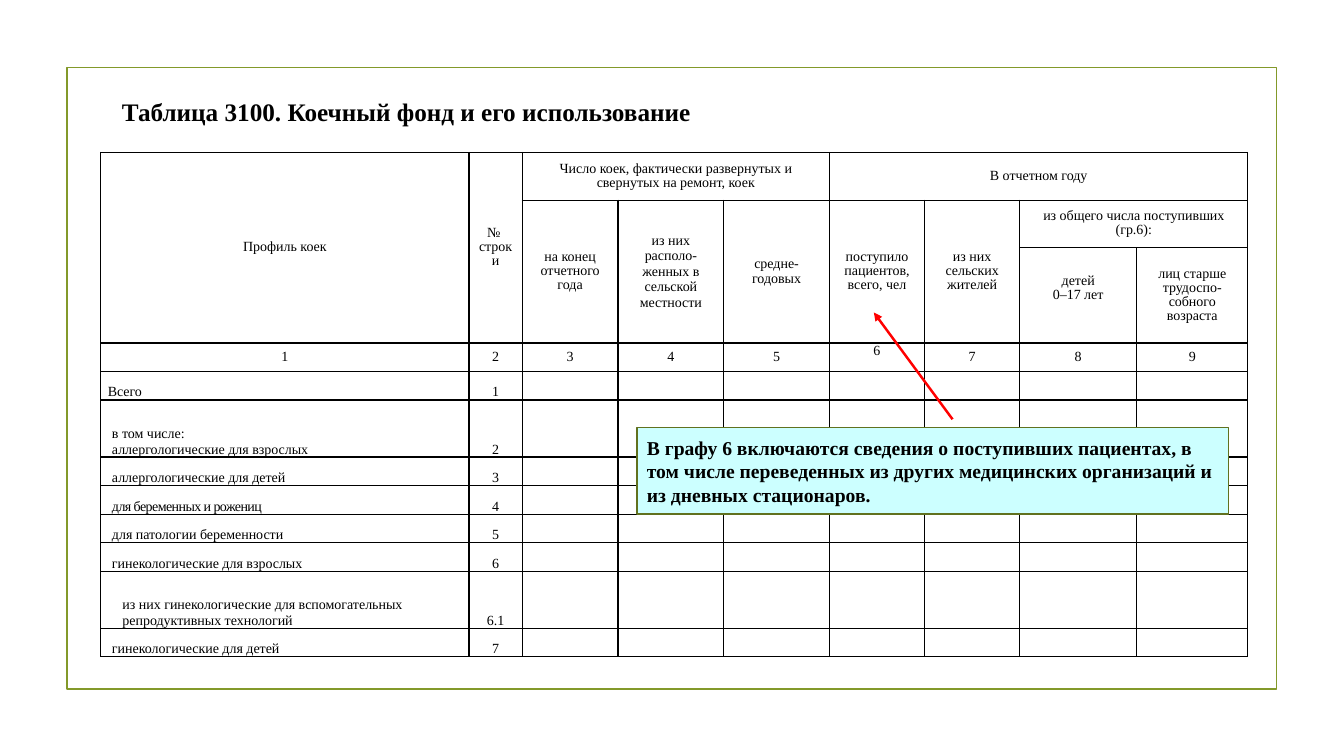
import pptx
import pptx.util
import pptx.dml.color
import pptx.enum.shapes
import pptx.enum.text
import pptx.oxml
import pptx.oxml.ns

Pt = pptx.util.Pt
ALIGN = pptx.enum.text.PP_ALIGN
ANCHOR = pptx.enum.text.MSO_ANCHOR
RECTANGLE = pptx.enum.shapes.MSO_SHAPE.RECTANGLE
NAMESPACE = pptx.oxml.ns.nsdecls("a")

COLUMN_WIDTHS = [263, 38, 68.5, 75.5, 75.5, 68, 68, 83.5, 79.5]
LINE_HEIGHT = 20.4
ROW_HEIGHTS = [34, 34, 68] + [LINE_HEIGHT * lines for lines in (1, 1, 2, 1, 1, 1, 1, 2, 1)]

HEADINGS = [
    (0, 0, 3, 1, "Профиль коек", 10),
    (0, 1, 3, 1, "№ \vстроки", 10),
    (0, 2, 1, 3, "Число коек, фактически развернутых и свернутых на ремонт, коек", 10),
    (0, 5, 1, 4, "В отчетном году", 10),
    (1, 2, 2, 1, "на конец отчетного года", 10),
    (1, 3, 2, 1, "из них\nрасполо-\nженных в сельской местности", None),
    (1, 4, 2, 1, "средне-годовых", None),
    (1, 5, 2, 1, "поступило пациентов, всего, чел", 10),
    (1, 6, 2, 1, "из них сельских жителей", 10),
    (1, 7, 1, 2, "из общего числа поступивших (гр.6):", 10),
    (2, 7, 1, 1, "детей\n0–17 лет", 10),
    (2, 8, 1, 1, "лиц старше трудоспо-собного возраста", 10),
]

PROFILES = [
    ("Всего", "1", 0),
    ("в том числе:\nаллергологические для взрослых", "2", 3),
    ("аллергологические для детей", "3", 3),
    ("для беременных и рожениц", "4", 3),
    ("для патологии беременности", "5", 3),
    ("гинекологические для взрослых", "6", 3),
    ("из них гинекологические для вспомогательных\nрепродуктивных технологий", "6.1", 10.5),
    ("гинекологические для детей", "7", 3),
]


def color(value):
    return pptx.dml.color.RGBColor.from_string(value)


def style_font(paragraph, size, bold=False):
    paragraph.font.name = "Times New Roman"
    paragraph.font.size = Pt(size)
    paragraph.font.bold = bold
    paragraph.font.color.rgb = color("000000")


def add_title(slide, text):
    frame = slide.shapes.add_textbox(Pt(80), Pt(65), Pt(811), Pt(29)).text_frame
    frame.word_wrap = True
    frame.text = text
    style_font(frame.paragraphs[0], 18, True)


def add_box(slide, left, top, width, height, line, fill=None):
    box = slide.shapes.add_shape(RECTANGLE, Pt(left), Pt(top), Pt(width), Pt(height))
    box.shadow.inherit = False
    if fill:
        box.fill.solid()
        box.fill.fore_color.rgb = color(fill)
    else:
        box.fill.background()
    box.line.color.rgb = color(line)
    box.line.width = Pt(1.25)
    return box


def add_callout(slide, text):
    callout = add_box(slide, 455, 305.3, 422.6, 62, "61711F", "CCFFFF")
    frame = callout.text_frame
    frame.word_wrap = True
    frame.vertical_anchor = ANCHOR.MIDDLE
    frame.text = text
    frame.paragraphs[0].alignment = ALIGN.LEFT
    style_font(frame.paragraphs[0], 14, True)


def add_arrow(slide, start, end):
    points = [Pt(value) for value in start + end]
    arrow = slide.shapes.add_connector(pptx.enum.shapes.MSO_CONNECTOR.STRAIGHT, *points)
    arrow.line.color.rgb = color("FF0000")
    arrow.line.width = Pt(1.75)
    arrow.line._get_or_add_ln().append(
        pptx.oxml.parse_xml(f'<a:tailEnd {NAMESPACE} type="triangle"/>'))
    arrow._element.spPr.append(pptx.oxml.parse_xml(f"<a:effectLst {NAMESPACE}/>"))


def prepare_cell(cell):
    cell.margin_left = cell.margin_right = Pt(5)
    cell.margin_top = cell.margin_bottom = 0
    properties = cell._tc.get_or_add_tcPr()
    for side in ("lnL", "lnR", "lnT", "lnB"):
        properties.append(pptx.oxml.parse_xml(
            f'<a:{side} {NAMESPACE} w="{Pt(1)}"><a:solidFill>'
            f'<a:srgbClr val="000000"/></a:solidFill></a:{side}>'))
    cell.fill.background()
    empty_line = cell.text_frame.paragraphs[0]
    style_font(empty_line, 10)
    empty_line._p.get_or_add_endParaRPr().set("sz", "1000")


def write_cell(cell, text, anchor, align=ALIGN.CENTER, spacing=None, indent=0):
    cell.text = text
    cell.vertical_anchor = anchor
    for paragraph in cell.text_frame.paragraphs:
        paragraph.alignment = align
        if spacing:
            paragraph.line_spacing = Pt(spacing)
        if indent:
            paragraph._p.get_or_add_pPr().set("marL", str(Pt(indent)))
        style_font(paragraph, 10)


def add_bed_table(slide):
    table = slide.shapes.add_table(
        len(ROW_HEIGHTS), len(COLUMN_WIDTHS), Pt(72), Pt(109),
        Pt(sum(COLUMN_WIDTHS)), Pt(sum(ROW_HEIGHTS))).table
    table.first_row = table.horz_banding = False
    for column, width in zip(table.columns, COLUMN_WIDTHS):
        column.width = Pt(width)
    for row, height in zip(table.rows, ROW_HEIGHTS):
        row.height = Pt(height)
    for cell in table.iter_cells():
        prepare_cell(cell)

    for row, column, height, width, text, spacing in HEADINGS:
        heading = table.cell(row, column)
        if height * width > 1:
            heading.merge(table.cell(row + height - 1, column + width - 1))
        write_cell(heading, text, ANCHOR.MIDDLE, spacing=spacing)
    table.cell(2, 7).margin_bottom = Pt(10)

    for column in range(len(COLUMN_WIDTHS)):
        anchor = ANCHOR.TOP if column == 5 else ANCHOR.MIDDLE
        write_cell(table.cell(3, column), str(column + 1), anchor, spacing=11)

    for row, (profile, number, indent) in enumerate(PROFILES, 4):
        spacing = 12 if number == "7" else None
        write_cell(table.cell(row, 0), profile, ANCHOR.BOTTOM, ALIGN.LEFT, spacing, indent)
        write_cell(table.cell(row, 1), number, ANCHOR.BOTTOM, spacing=spacing)
    maternity = table.cell(7, 0).text_frame.paragraphs[0].runs[0]
    maternity._r.get_or_add_rPr().set("spc", "-40")


def main():
    presentation = pptx.Presentation()
    presentation.slide_width = Pt(960)
    presentation.slide_height = Pt(540)
    slide = presentation.slides.add_slide(presentation.slide_layouts[6])
    add_box(slide, 47.8, 48.2, 864, 444, "83992A")
    add_title(slide, "Таблица 3100. Коечный фонд и его использование")
    add_bed_table(slide)
    add_callout(slide, "В графу 6 включаются сведения о поступивших пациентах, в том числе "
                       "переведенных из других медицинских организаций и из дневных стационаров.")
    add_arrow(slide, (680.4, 299.5), (624.2, 223.2))
    presentation.save("out.pptx")


if __name__ == "__main__":
    main()
